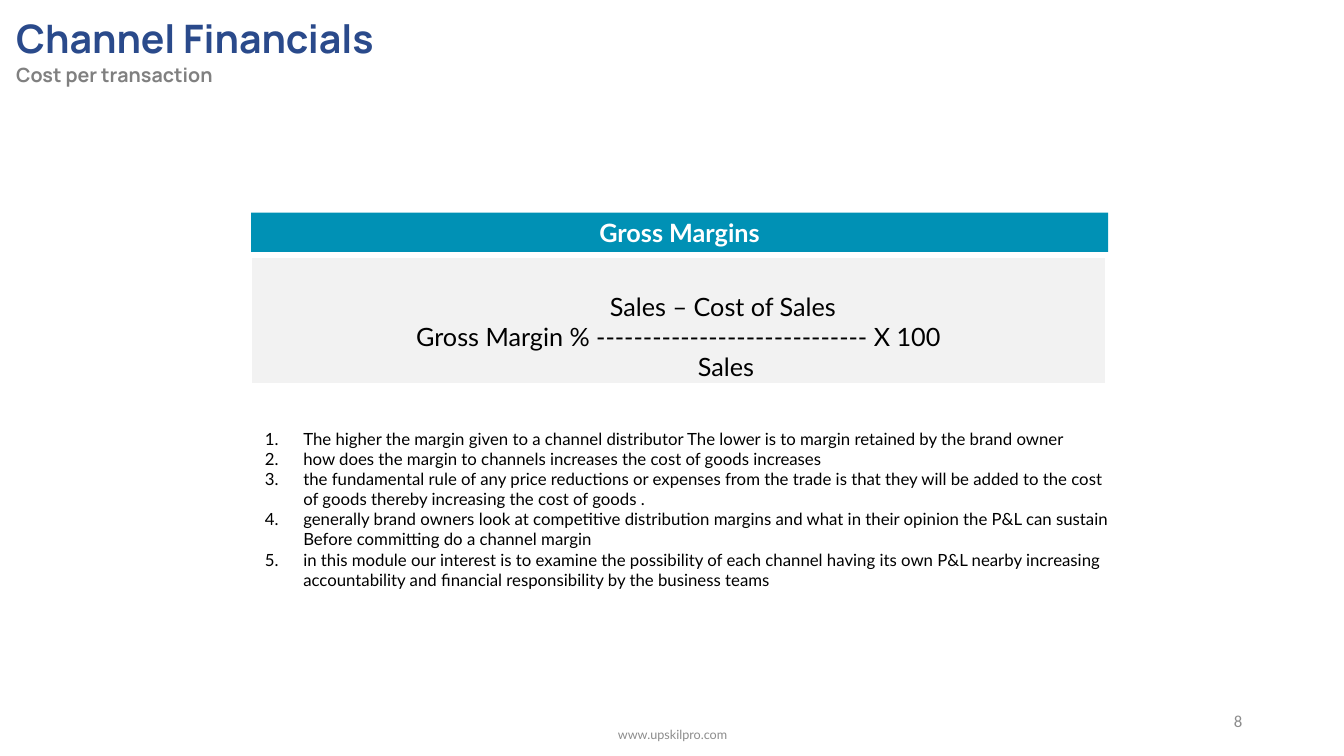
import pptx
import pptx.dml.color
import pptx.enum.shapes
import pptx.enum.text
import pptx.oxml
import pptx.oxml.ns
import pptx.util

SLIDE_WIDTH = pptx.util.Inches(13.33)
SLIDE_HEIGHT = pptx.util.Inches(7.5)
ALIGN = pptx.enum.text.PP_ALIGN
ANCHOR = pptx.enum.text.MSO_ANCHOR

MARGIN_NOTES = [
    "The higher the margin given to a channel distributor The lower is to margin retained by the brand owner",
    "how does the margin to channels increases the cost of goods increases",
    "the fundamental rule of any price reductions or expenses from the trade is that they will be added to the cost of goods thereby increasing the cost of goods .",
    "generally brand owners look at competitive distribution margins and what in their opinion the P&L can sustain Before committing do a channel margin",
    "in this module our interest is to examine the possibility of each channel having its own P&L nearby increasing accountability and financial responsibility by the business teams",
]
FORMULA_LINES = [
    ("Sales – Cost of Sales", 0.88),
    ("Gross Margin % ----------------------------- X 100", 0),
    ("Sales", 0.94),
]


def color(hex_string):
    return pptx.dml.color.RGBColor.from_string(hex_string)


def area(left, top, width, height):
    return (
        round(SLIDE_WIDTH * left / 100),
        round(SLIDE_HEIGHT * top / 100),
        round(SLIDE_WIDTH * width / 100),
        round(SLIDE_HEIGHT * height / 100),
    )


def prepare_frame(shape, anchor):
    frame = shape.text_frame
    frame.word_wrap = True
    frame.auto_size = pptx.enum.text.MSO_AUTO_SIZE.NONE
    frame.vertical_anchor = anchor
    return frame


def next_paragraph(frame):
    first = frame.paragraphs[0]
    return frame.add_paragraph() if first.runs else first


def add_line(frame, text, size, font, hex_string, align=ALIGN.LEFT, bold=False):
    paragraph = next_paragraph(frame)
    paragraph.alignment = align
    run = paragraph.add_run()
    run.text = text
    run.font.size = pptx.util.Pt(size)
    run.font.name = font
    run.font.bold = bold
    run.font.color.rgb = color(hex_string)
    return paragraph


def indent(paragraph, left, first=0):
    properties = paragraph._p.get_or_add_pPr()
    properties.set("marL", str(pptx.util.Inches(left)))
    properties.set("indent", str(pptx.util.Inches(first)))
    return properties


def number(paragraph):
    properties = indent(paragraph, 0.38, -0.38)
    bullet = pptx.oxml.parse_xml(
        f'<a:buAutoNum {pptx.oxml.ns.nsdecls("a")} type="arabicPeriod"/>'
    )
    properties.append(bullet)


def add_text(slide, place, anchor=ANCHOR.MIDDLE):
    return prepare_frame(slide.shapes.add_textbox(*place), anchor)


def add_panel(slide, place, fill, line=None, anchor=ANCHOR.MIDDLE):
    shape = slide.shapes.add_shape(pptx.enum.shapes.MSO_SHAPE.RECTANGLE, *place)
    shape.shadow.inherit = False
    shape.fill.solid()
    shape.fill.fore_color.rgb = color(fill)
    if line:
        shape.line.color.rgb = color(line)
        shape.line.width = pptx.util.Pt(1)
    else:
        shape.line.fill.background()
    return prepare_frame(shape, anchor)


def add_heading(slide, place, title, subtitle):
    shape = slide.shapes.title
    shape.left, shape.top, shape.width, shape.height = place
    frame = prepare_frame(shape, ANCHOR.TOP)
    frame.margin_top = pptx.util.Inches(0.11)
    add_line(frame, title, 28, "Manrope", "2A4A8B", bold=True)
    paragraph = add_line(frame, subtitle, 14, "Manrope", "808080", bold=True)
    paragraph.space_before = pptx.util.Pt(1)


def add_formula(slide, place):
    frame = add_panel(slide, place, "F2F2F2", "FFFFFF", ANCHOR.BOTTOM)
    frame.margin_bottom = pptx.util.Inches(0.02)
    for text, left in FORMULA_LINES:
        indent(add_line(frame, text, 18, "Lato", "000000", ALIGN.CENTER), left)


def add_notes_list(slide, place):
    frame = add_text(slide, place, ANCHOR.TOP)
    for note in MARGIN_NOTES:
        number(add_line(frame, note, 12, "Lato", "000000"))


def main():
    presentation = pptx.Presentation()
    presentation.slide_width = SLIDE_WIDTH
    presentation.slide_height = SLIDE_HEIGHT
    slide = presentation.slides.add_slide(presentation.slide_layouts[5])

    add_heading(slide, area(0.45, 0.4, 64.59, 11.73),
                "Channel Financials", "Cost per transaction")
    banner = add_panel(slide, area(18.68, 28.13, 63.77, 5.2), "0091B5")
    add_line(banner, "Gross Margins", 18, "Lato", "FFFFFF", ALIGN.CENTER, True)
    add_formula(slide, area(18.68, 34, 63.62, 16.8))
    add_notes_list(slide, area(18.98, 56, 64.44, 22.93))

    footer = add_text(slide, area(33.16, 94.53, 33.76, 5.33))
    add_line(footer, "www.upskilpro.com", 9, "Lato", "8C8C8C", ALIGN.CENTER)
    page = add_text(slide, area(70.67, 92.67, 22.51, 5.33))
    add_line(page, "8", 12, "Calibri", "8C8C8C", ALIGN.RIGHT)

    presentation.save("out.pptx")


if __name__ == "__main__":
    main()
